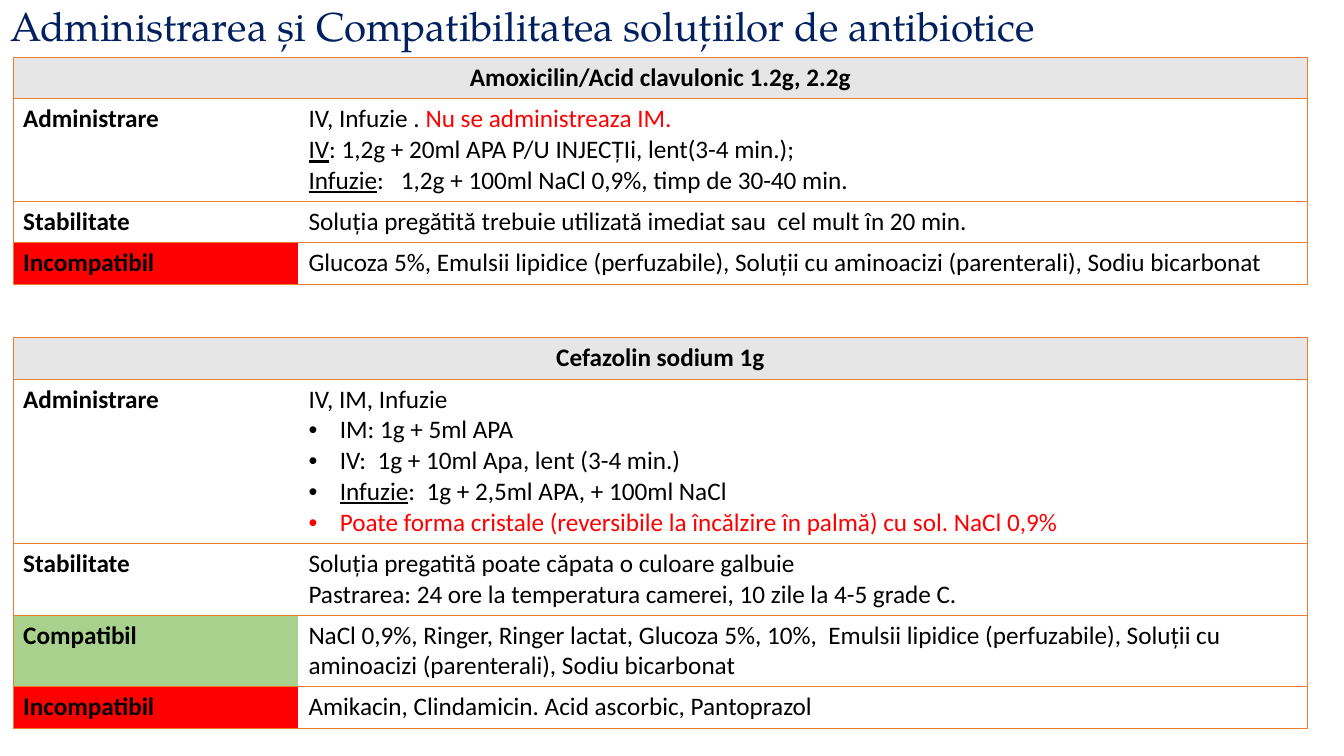
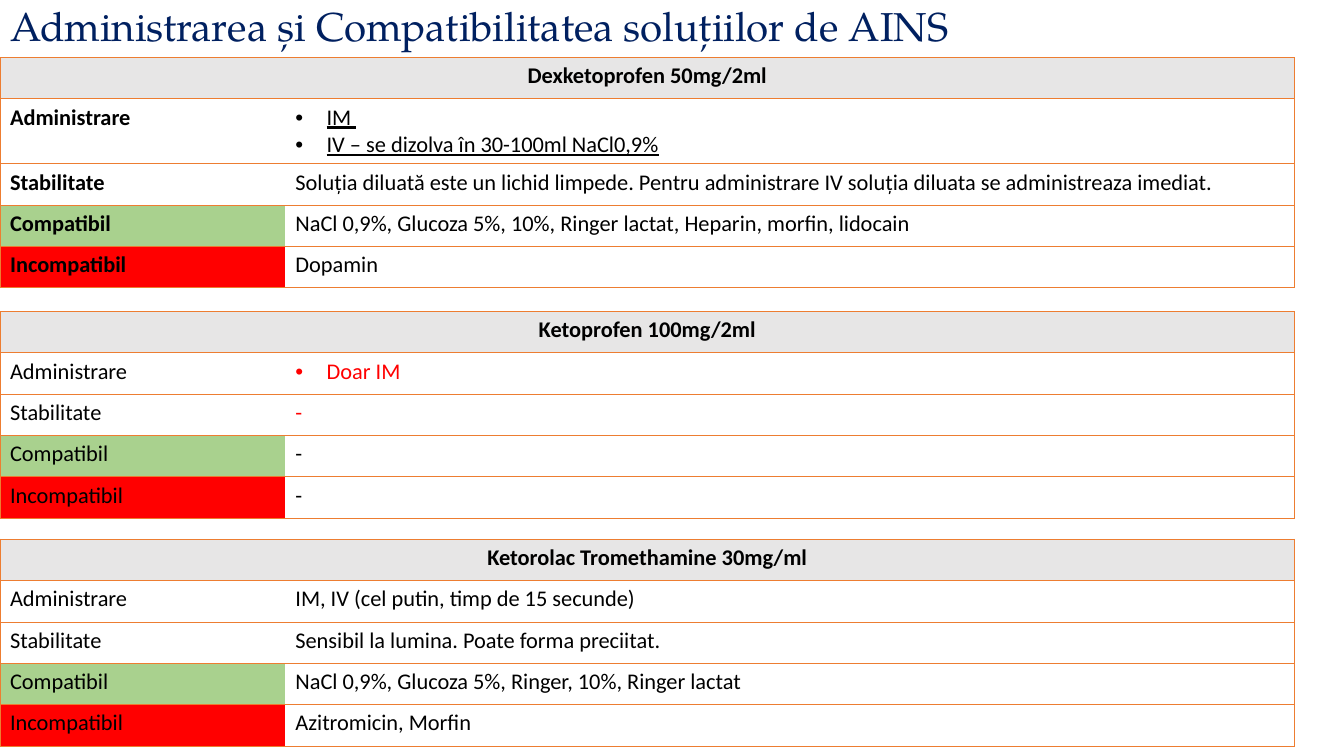
"""Build two slides of tables on giving and mixing drug solutions."""
from math import ceil
from lxml.etree import SubElement
from pptx import Presentation
from pptx.dml.color import RGBColor
from pptx.enum.text import MSO_ANCHOR, PP_ALIGN
from pptx.oxml.ns import qn
from pptx.util import Inches, Pt

HUES = {"navy": "002060", "black": "000000", "red": "FF0000", "green": "A9D18E",
        "grey": "E7E6E6", "white": "FFFFFF", "orange": "ED7D31"}
FILLS = {"Compatibil": "green", "Incompatibil": "red"}
PLAIN = "{2D5ABB26-0587-4C30-8999-92F81FD0307C}"
COLS = (2.83, 10.01)
ROW = 0.41


def write(para, text, size=18, font="Calibri", hue="black", bold=False,
          under=False, bullet=False, align=PP_ALIGN.LEFT):
    para.alignment = align
    run = para.add_run()
    run.text = text
    run.font.size = Pt(size)
    run.font.name = font
    run.font.bold = bold
    run.font.underline = under
    run.font.color.rgb = RGBColor.from_string(HUES[hue])
    if bullet:
        props = para._p.get_or_add_pPr()
        props.set("marL", str(Inches(0.31)))
        props.set("indent", str(-Inches(0.31)))
        SubElement(props, qn("a:buFont")).set("typeface", "Arial")
        SubElement(props, qn("a:buChar")).set("char", "•")


def paint(cell, hue, sides):
    props = cell._tc.get_or_add_tcPr()
    for side in sides:
        line = SubElement(props, qn("a:ln" + side), w=str(Pt(0.5)))
        fill = SubElement(line, qn("a:solidFill"))
        SubElement(fill, qn("a:srgbClr"), val=HUES["orange"])
    cell.fill.solid()
    cell.fill.fore_color.rgb = RGBColor.from_string(HUES[hue])


RED = {"hue": "red"}
LINE = {"under": True}
DOT = {"bullet": True}

AMOXI = [
    ("Administrare", [
        [("IV, Infuzie . ", {}), ("Nu se administreaza IM.", RED)],
        [("IV", LINE), (": 1,2g + 20ml APA P/U INJECȚIi, lent(3-4 min.);", {})],
        [("Infuzie", LINE), (":   1,2g + 100ml NaCl 0,9%, timp de 30-40 min.", {})]]),
    ("Stabilitate", [
        [("Soluția pregătită trebuie utilizată imediat sau  cel mult în 20 min.", {})]]),
    ("Incompatibil", [
        [("Glucoza 5%, Emulsii lipidice (perfuzabile), Soluții cu aminoacizi "
          "(parenterali), Sodiu bicarbonat", {})]]),
]
CEFA = [
    ("Administrare", [
        [("IV, IM, Infuzie", {})],
        [("IM: 1g + 5ml APA", DOT)],
        [("IV:  1g + 10ml Apa, lent (3-4 min.)", DOT)],
        [("Infuzie", LINE | DOT), (":  1g + 2,5ml APA, + 100ml NaCl", {})],
        [("Poate forma cristale (reversibile la încălzire în palmă) "
          "cu sol. NaCl 0,9%", RED | DOT)]]),
    ("Stabilitate", [
        [("Soluția pregatită poate căpata o culoare galbuie", {})],
        [("Pastrarea: 24 ore la temperatura camerei, 10 zile la 4-5 grade C.", {})]]),
    ("Compatibil", [
        [("NaCl 0,9%, Ringer, Ringer lactat, Glucoza 5%, 10%,  Emulsii lipidice "
          "(perfuzabile), Soluții cu aminoacizi (parenterali), Sodiu bicarbonat", {})]]),
    ("Incompatibil", [[("Amikacin, Clindamicin. Acid ascorbic, Pantoprazol", {})]]),
]
DEXKETO = [
    ("Administrare", [
        [("IM ", LINE | DOT)],
        [("IV – se dizolva în 30-100ml NaCl0,9%", LINE | DOT)]]),
    ("Stabilitate", [
        [("Soluția diluată este un lichid limpede. Pentru administrare IV "
          "soluția diluata se administreaza imediat.", {})]]),
    ("Compatibil", [
        [("NaCl 0,9%, Glucoza 5%, 10%, Ringer lactat, Heparin, morfin, lidocain", {})]]),
    ("Incompatibil", [[("Dopamin", {})]]),
]
KETO = [
    ("Administrare", [[("Doar IM", RED | DOT)]]),
    ("Stabilitate", [[("-", RED)]]),
    ("Compatibil", [[("-", {})]]),
    ("Incompatibil", [[("-", {})]]),
]
KETOR = [
    ("Administrare", [[("IM, IV (cel putin, timp de 15 secunde)", {})]]),
    ("Stabilitate", [[("Sensibil la lumina. Poate forma preciitat.", {})]]),
    ("Compatibil", [[("NaCl 0,9%, Glucoza 5%, Ringer, 10%, Ringer lactat", {})]]),
    ("Incompatibil", [[("Azitromicin, Morfin", {})]]),
]
SLIDES = [
    ("antibiotice", 0.13, 18, [
        ("Amoxicilin/Acid clavulonic 1.2g, 2.2g", 0.57, True, AMOXI),
        ("Cefazolin sodium 1g", 3.35, True, CEFA)]),
    ("AINS", 0, 16, [
        ("Dexketoprofen 50mg/2ml", 0.57, True, DEXKETO),
        ("Ketoprofen 100mg/2ml", 3.09, False, KETO),
        ("Ketorolac Tromethamine 30mg/ml", 5.35, False, KETOR)]),
]

deck = Presentation()
deck.slide_width = Inches(13.33)
deck.slide_height = Inches(7.5)

for group, left, size, tables in SLIDES:
    slide = deck.slides.add_slide(deck.slide_layouts[5])
    title = slide.shapes.title
    title.left, title.top = Inches(0), Inches(0)
    title.width, title.height = Inches(11.5), Inches(0.57)
    title.text_frame.vertical_anchor = MSO_ANCHOR.MIDDLE
    head = title.text_frame.paragraphs[0]
    head.line_spacing = 0.9
    write(head, f"Administrarea și Compatibilitatea soluțiilor de {group}",
          size=28.8, font="TeX Gyre Pagella", hue="navy")

    for drug, top, bold, rows in tables:
        count = len(rows) + 1
        frame = slide.shapes.add_table(count, 2, Inches(left), Inches(top),
                                       Inches(sum(COLS)), Inches(ROW * count))
        table = frame.table
        table.first_row = table.horz_banding = False
        table._tbl.tblPr.find(qn("a:tableStyleId")).text = PLAIN
        for col, width in zip(table.columns, COLS):
            col.width = Inches(width)

        first = table.cell(0, 0)
        first.merge(table.cell(0, 1))
        paint(first, "grey", "LRTB")
        paint(table.cell(0, 1), "grey", "RTB")
        write(first.text_frame.paragraphs[0], drug, size=size, bold=True,
              align=PP_ALIGN.CENTER)

        for index, (label, paras) in enumerate(rows, 1):
            name, body = table.cell(index, 0), table.cell(index, 1)
            paint(name, FILLS.get(label, "white"), "LTB")
            paint(body, "white", "RTB")
            write(name.text_frame.paragraphs[0], label, size=size, bold=bold)
            lines = 0
            for place, runs in enumerate(paras):
                text = body.text_frame
                para = text.add_paragraph() if place else text.paragraphs[0]
                for words, style in runs:
                    write(para, words, size=size, **style)
                lines += ceil(len(para.text) / 105)
            table.rows[index].height = Inches(max(ROW, 0.1 + lines * size * 0.017))

deck.save("out.pptx")
